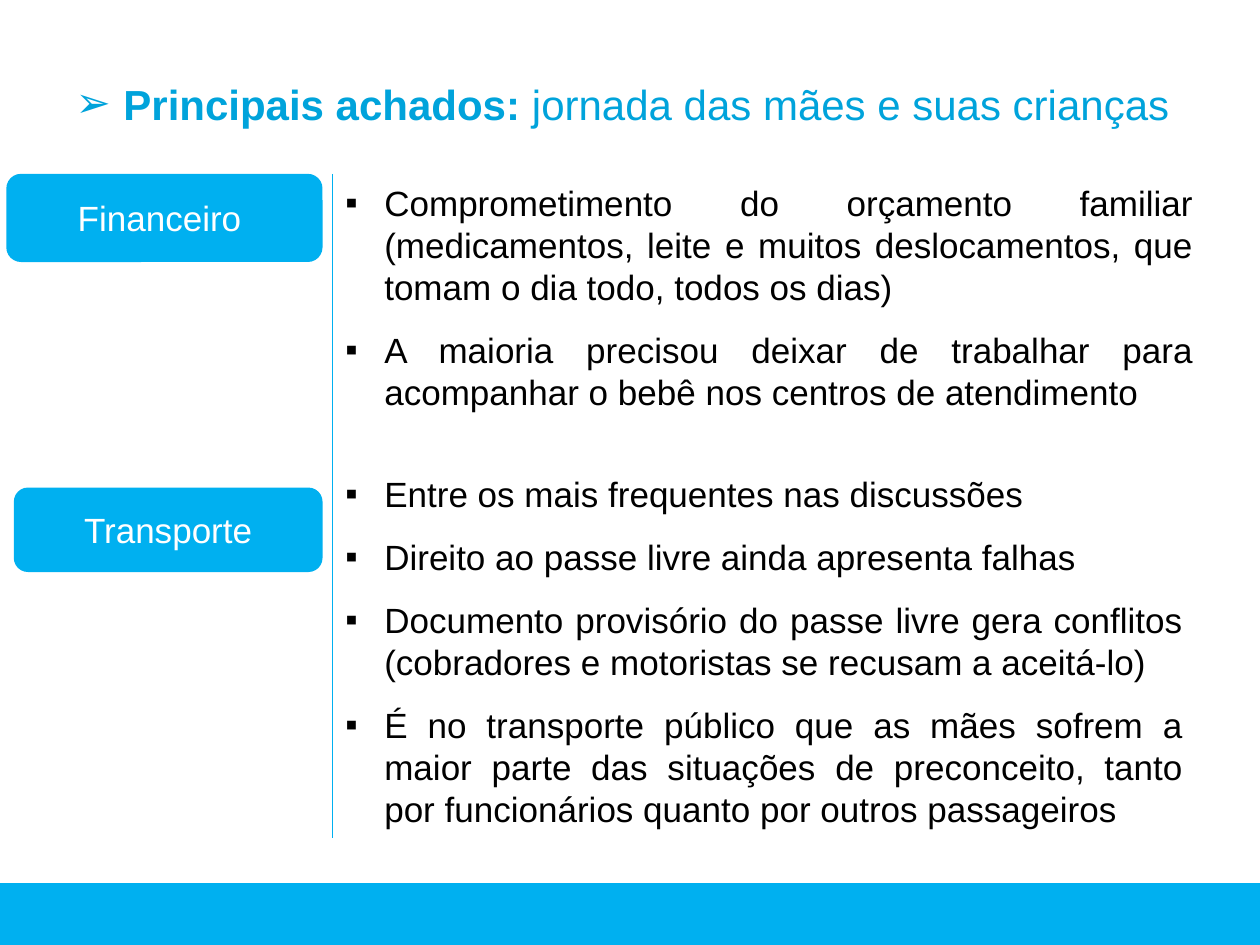
"""Builds the slide on the main findings about the journey of mothers and children."""
from dataclasses import dataclass

from lxml.etree import SubElement
from pptx import Presentation
from pptx.dml.color import RGBColor
from pptx.enum.shapes import MSO_CONNECTOR, MSO_SHAPE
from pptx.enum.text import MSO_ANCHOR, MSO_AUTO_SIZE, PP_ALIGN
from pptx.oxml.ns import qn
from pptx.util import Inches, Pt

CYAN = RGBColor(0x00, 0xB0, 0xF0)
TITLE_BLUE = RGBColor(0x00, 0xA3, 0xDB)
BLACK = RGBColor(0x00, 0x00, 0x00)
WHITE = RGBColor(0xFF, 0xFF, 0xFF)

TITLE_PARA = {"alignment": PP_ALIGN.JUSTIFY, "line_spacing": 1.5, "space_before": Pt(0)}
ITEM_PARA = {"alignment": PP_ALIGN.JUSTIFY, "space_before": Pt(0), "space_after": Pt(12)}
FRAME = {"word_wrap": True, "auto_size": MSO_AUTO_SIZE.SHAPE_TO_FIT_TEXT,
         "vertical_anchor": MSO_ANCHOR.TOP}


@dataclass(frozen=True)
class Box:
    left: float
    top: float
    width: float
    height: float

    def lengths(self) -> list:
        return [Inches(v) for v in (self.left, self.top, self.width, self.height)]


@dataclass(frozen=True)
class Topic:
    label: str
    label_box: Box
    list_box: Box
    items: tuple


TOPICS = (
    Topic("Financeiro ", Box(0.05, 1.38, 2.51, 0.7), Box(2.64, 1.39, 6.93, 1.95), (
        "Comprometimento do orçamento familiar (medicamentos, leite e muitos "
        "deslocamentos, que tomam o dia todo, todos os dias)",
        "A maioria precisou deixar de trabalhar para acompanhar o bebê nos "
        "centros de atendimento",
    )),
    Topic("Transporte", Box(0.11, 3.87, 2.45, 0.67), Box(2.64, 3.7, 6.85, 2.96), (
        "Entre os mais frequentes nas discussões",
        "Direito ao passe livre ainda apresenta falhas",
        "Documento provisório do passe livre gera conflitos (cobradores e "
        "motoristas se recusam a aceitá-lo)",
        "É no transporte público que as mães sofrem a maior parte das situações "
        "de preconceito, tanto por funcionários quanto por outros passageiros",
    )),
)


def set_all(obj, values: dict) -> None:
    for name, value in values.items():
        setattr(obj, name, value)


def add_run(p, text: str, size: int, color: RGBColor, bold: bool = False) -> None:
    r = p.add_run()
    r.text = text
    set_all(r.font, {"name": "Arial", "size": Pt(size), "bold": bold})
    r.font.color.rgb = color


def set_bullet(p, char: str, indent: float, color: RGBColor) -> None:
    pPr = p._p.get_or_add_pPr()
    pPr.set("marL", str(Inches(indent)))
    pPr.set("indent", str(-Inches(indent)))
    clr = SubElement(pPr, qn("a:buClr"))
    SubElement(clr, qn("a:srgbClr"), val=str(color))
    SubElement(pPr, qn("a:buFont"), typeface="Arial")
    SubElement(pPr, qn("a:buChar"), char=char)


def place(sp, box: Box):
    set_all(sp, dict(zip(("left", "top", "width", "height"), box.lengths())))
    set_all(sp.text_frame, FRAME)
    return sp.text_frame


def add_block(s, kind: MSO_SHAPE, box: Box):
    sp = s.shapes.add_shape(kind, *box.lengths())
    sp.shadow.inherit = False
    sp.fill.solid()
    sp.fill.fore_color.rgb = CYAN
    sp.line.fill.background()
    return sp


def add_divider(s, x: float, top: float, bottom: float) -> None:
    line = s.shapes.add_connector(
        MSO_CONNECTOR.STRAIGHT, Inches(x), Inches(top), Inches(x), Inches(bottom))
    line.line.color.rgb = CYAN
    line.line.width = Pt(0.5)
    SubElement(line._element.spPr, qn("a:effectLst"))


def fill_title(sp) -> None:
    p = place(sp, Box(0.5, 0.37, 9.07, 0.63)).paragraphs[0]
    set_all(p, TITLE_PARA)
    set_bullet(p, "➢", 0.38, TITLE_BLUE)
    add_run(p, "Principais achados: ", 24, TITLE_BLUE, bold=True)
    add_run(p, "jornada das mães e suas crianças", 24, TITLE_BLUE)


def add_topic(s, body, topic: Topic) -> None:
    sp = add_block(s, MSO_SHAPE.ROUNDED_RECTANGLE, topic.label_box)
    sp.text_frame.vertical_anchor = MSO_ANCHOR.MIDDLE
    p = sp.text_frame.paragraphs[0]
    p.alignment = PP_ALIGN.CENTER
    add_run(p, topic.label, 20, WHITE)

    tf = place(body, topic.list_box)
    for i, item in enumerate(topic.items):
        p = tf.add_paragraph() if i else tf.paragraphs[0]
        set_all(p, ITEM_PARA)
        set_bullet(p, "▪", 0.31, BLACK)
        add_run(p, item, 20, BLACK)


def main() -> None:
    prs = Presentation()
    set_all(prs, {"slide_width": Inches(10), "slide_height": Inches(7.5)})
    s = prs.slides.add_slide(prs.slide_layouts.get_by_name("Two Content"))
    title, *bodies = list(s.placeholders)
    fill_title(title)
    add_block(s, MSO_SHAPE.RECTANGLE, Box(-0.03, 7.01, 10.03, 0.49))
    add_divider(s, 2.64, 1.38, 6.65)
    for body, topic in zip(bodies, TOPICS):
        add_topic(s, body, topic)
    prs.save("out.pptx")


if __name__ == "__main__":
    main()
